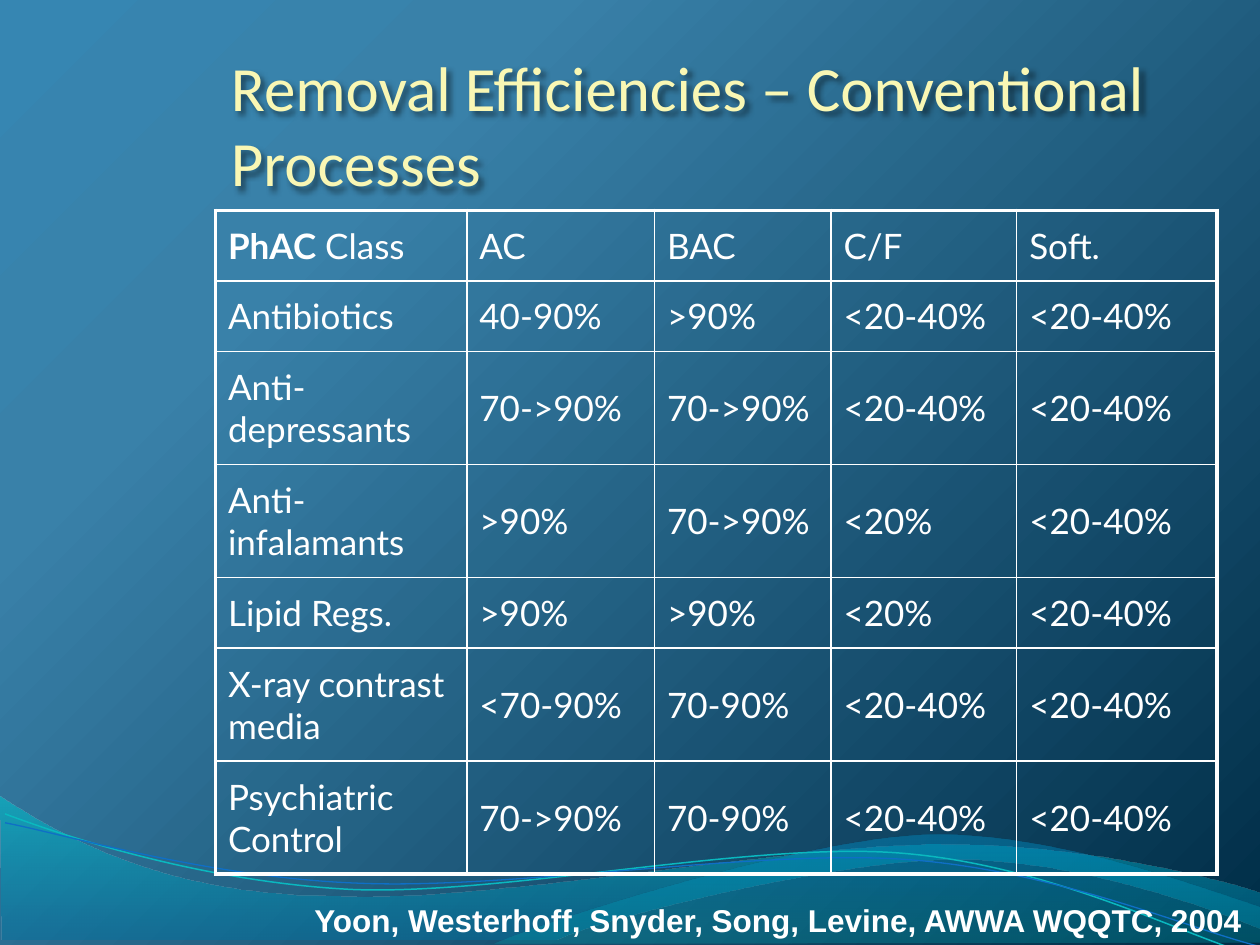
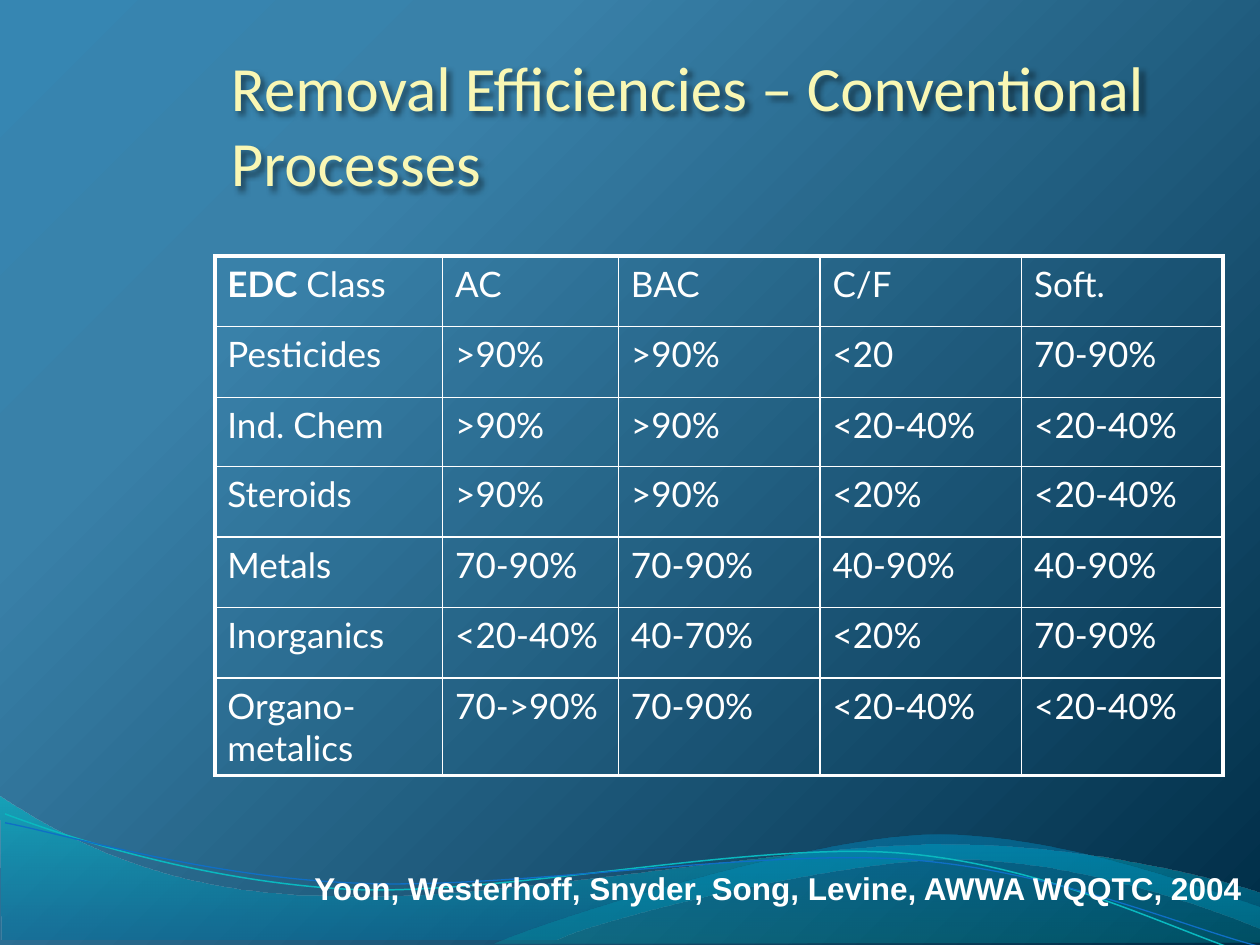
from lxml import etree
from pptx import Presentation
from pptx.dml.color import RGBColor
from pptx.enum.text import MSO_ANCHOR, MSO_AUTO_SIZE, PP_ALIGN
from pptx.oxml import parse_xml
from pptx.oxml.ns import nsdecls, qn
from pptx.util import Inches, Pt

LEFT, CENTER = PP_ALIGN.LEFT, PP_ALIGN.CENTER
TOP, MIDDLE, BOTTOM = MSO_ANCHOR.TOP, MSO_ANCHOR.MIDDLE, MSO_ANCHOR.BOTTOM
NO_FIT = MSO_AUTO_SIZE.NONE

WHITE = RGBColor(0xFF, 0xFF, 0xFF)
CREAM = RGBColor(0xF9, 0xF7, 0xB4)
SKY = RGBColor(0x36, 0x86, 0xB2)
STEEL = RGBColor(0x39, 0x81, 0xA9)
NAVY = RGBColor(0x00, 0x2D, 0x47)
OCEAN = RGBColor(0x00, 0x74, 0xA1)
AQUA = RGBColor(0x00, 0xC6, 0xCF)
TEAL = RGBColor(0x00, 0xA1, 0xA9)
AZURE = RGBColor(0x00, 0x8B, 0xBF)
CYAN = RGBColor(0x0A, 0xB8, 0xBF)
BLUE = RGBColor(0x0F, 0x6F, 0xC6)

WIDE, HIGH = Inches(10), Inches(7.5)
UNIT = WIDE // 100
THICK, THIN = Pt(2.25), Pt(1)

TITLE = "Removal Efficiencies – Conventional Processes"
CREDIT = "Yoon, Westerhoff, Snyder, Song, Levine, AWWA WQQTC, 2004"
HEADS = ["AC", "BAC", "C/F", "Soft."]

PAGES = [
    dict(left=17.1, top=16.7, anchor=MIDDLE, foot=71, lead="PhAC",
         cols=[19.95, 14.9, 14, 14.75, 15.9],
         rows=[5.6, 5.6, 8.97, 8.97, 5.6, 8.97, 8.97],
         data=[
             ["Antibiotics", "40-90%", ">90%", "<20-40%", "<20-40%"],
             ["Anti-depressants", "70->90%", "70->90%", "<20-40%", "<20-40%"],
             ["Anti-infalamants", ">90%", "70->90%", "<20%", "<20-40%"],
             ["Lipid Regs.", ">90%", ">90%", "<20%", "<20-40%"],
             ["X-ray contrast media", "<70-90%", "70-90%", "<20-40%", "<20-40%"],
             ["Psychiatric Control", "70->90%", "70-90%", "<20-40%", "<20-40%"],
         ]),
    dict(left=17.05, top=20.33, anchor=TOP, foot=68.5, lead="EDC",
         cols=[18.08, 13.95, 16, 16, 16],
         rows=[5.6, 5.6, 5.5, 5.6, 5.6, 5.6, 5.6],
         data=[
             ["Pesticides", ">90%", ">90%", "<20", "70-90%"],
             ["Ind. Chem", ">90%", ">90%", "<20-40%", "<20-40%"],
             ["Steroids", ">90%", ">90%", "<20%", "<20-40%"],
             ["Metals", "70-90%", "70-90%", "40-90%", "40-90%"],
             ["Inorganics", "<20-40%", "40-70%", "<20%", "70-90%"],
             ["Organo-metalics", "70->90%", "70-90%", "<20-40%", "<20-40%"],
         ]),
]

WAVES = [
    dict(start=(0.1, 74.6), stops=[(0, OCEAN, 45), (100, AQUA, 55)], segs=[
        (44.1, 74.6),
        (47.6, 72.9, 66.4, 68.2, 75.9, 68.2),
        (85.3, 68.2, 95.8, 72, 100, 73.7),
        (100.1, 70.9),
        (98.3, 70.2, 87, 67, 74.6, 67),
        (62.2, 67, 38.2, 71.8, 25.8, 71.1),
        (13, 71, 4.7, 66.3, 0, 63.2),
        (0.1, 74.6)]),
    dict(start=(39.2, 74.9), stops=[(0, TEAL, 30), (80, AZURE, 45)], segs=[
        (42.7, 73.3, 62.9, 66.8, 73, 66.3),
        (83.1, 65.8, 95.5, 70.6, 100, 72),
        (100, 74.8),
        (39.2, 74.9)]),
    dict(start=(0.4, 64.6), line=CYAN, weight=0.85, segs=[
        (5.2, 66.4, 16.1, 70, 27.9, 70.6),
        (39.8, 71.1, 59.4, 66.8, 71.3, 67.7),
        (83.3, 68.6, 93.8, 74.2, 99.7, 75.9)]),
    dict(start=(0.4, 65.3), line=BLUE, weight=0.75, segs=[
        (5.1, 66.2, 16.7, 69.7, 28.6, 70.1),
        (40.5, 70.6, 59.9, 67.4, 71.7, 68.2),
        (83.6, 69, 94, 73.6, 99.9, 75.1)]),
]


def write(frame, *parts, size, font, color, bold=False, align=LEFT, before=0):
    para = frame.paragraphs[0]
    para.alignment = align
    if before:
        gap = etree.SubElement(para._p.get_or_add_pPr(), qn("a:spcBef"))
        etree.SubElement(gap, qn("a:spcPct")).set("val", str(before * 1000))
    for spot, part in enumerate(parts):
        run = para.add_run()
        run.text = part
        run.font.size = Pt(size)
        run.font.name = font
        run.font.color.rgb = color
        run.font.bold = bold and spot == 0


def blend(stops, way):
    marks = "".join(
        f'<a:gs pos="{at * 1000}"><a:srgbClr val="{color}">'
        f'<a:alpha val="{alpha * 1000}"/></a:srgbClr></a:gs>'
        for at, color, alpha in stops)
    return parse_xml(f'<a:gradFill {nsdecls("a")} rotWithShape="1">'
                     f'<a:gsLst>{marks}</a:gsLst>{way}</a:gradFill>')


deck = Presentation()
deck.slide_width, deck.slide_height = WIDE, HIGH
master = deck.slide_master
layout = deck.slide_layouts[5]

master.background.fill.solid()
solid = master.element.find(".//" + qn("p:bgPr")).find(qn("a:solidFill"))
solid.getparent().replace(solid, blend(
    [(0, SKY, 100), (25, STEEL, 100), (100, NAVY, 100)],
    '<a:path path="circle"><a:fillToRect l="0" t="0" r="100000" b="100000"/></a:path>'))

head = layout.placeholders[0]
head.left, head.top = round(18.33 * UNIT), round(3.33 * UNIT)
head.width, head.height = round(77.5 * UNIT), round(12.5 * UNIT)
frame = head.text_frame
frame.vertical_anchor = BOTTOM
frame.auto_size = NO_FIT
frame.margin_left = frame.margin_right = frame.margin_bottom = 0
frame.margin_top = Inches(0.05)

slides = [deck.slides.add_slide(layout) for page in PAGES]

for rank, wave in enumerate(WAVES):
    x, y = wave["start"]
    pen = slides[0].shapes.build_freeform(round(x * UNIT), round(y * UNIT))
    for seg in wave["segs"]:
        pen.add_line_segments([(round(x * UNIT), round(y * UNIT))
                               for x, y in zip(seg[::2], seg[1::2])], close=False)
    shape = pen.convert_to_shape()
    lines = iter(shape.element.findall(".//" + qn("a:lnTo")))
    for seg in wave["segs"]:
        line = next(lines)
        if len(seg) == 6:
            curve = etree.Element(qn("a:cubicBezTo"))
            line.addprevious(curve)
            for knot in (line, next(lines), next(lines)):
                curve.append(knot[0])
                knot.getparent().remove(knot)
    shape.shadow.inherit = False
    if "stops" in wave:
        etree.SubElement(curve.getparent(), qn("a:close"))
        shape.line.fill.background()
        shape.fill.solid()
        props = shape.element.spPr
        props.replace(props.find(qn("a:solidFill")),
                      blend(wave["stops"], '<a:lin ang="16200000" scaled="0"/>'))
    else:
        shape.fill.background()
        shape.line.color.rgb = wave["line"]
        shape.line.width = Pt(wave["weight"])
    shape.element.find(".//" + qn("p:cNvPr")).set("id", str(100 + rank))
    master.shapes.element.insert(2 + rank, shape.element)

for slide, page in zip(slides, PAGES):
    title = slide.shapes.title
    write(title.text_frame, TITLE, size=36, font="Calibri", color=CREAM)
    title.fill.background()
    title.element.spPr.append(parse_xml(
        f'<a:effectLst {nsdecls("a")}><a:outerShdw blurRad="38100" dist="38100" '
        'dir="2700000" algn="tl"><a:srgbClr val="000000"><a:alpha val="45000"/>'
        '</a:srgbClr></a:outerShdw></a:effectLst>'))

    cols, rows = page["cols"], page["rows"]
    grid = slide.shapes.add_table(
        len(rows), len(cols), round(page["left"] * UNIT), round(page["top"] * UNIT),
        round(sum(cols) * UNIT), round(sum(rows) * UNIT)).table
    grid.first_row = grid.horz_banding = False
    for col, width in zip(grid.columns, cols):
        col.width = round(width * UNIT)
    for row, height in zip(grid.rows, rows):
        row.height = round(height * UNIT)

    for r, words in enumerate([[page["lead"]] + HEADS] + page["data"]):
        for c, word in enumerate(words):
            cell = grid.cell(r, c)
            first = r == c == 0
            parts = [word, " Class"] if first else [word]
            write(cell.text_frame, *parts, size=20, font="Lato", color=WHITE,
                  bold=first, before=20)
            cell.vertical_anchor = page["anchor"]
            cell.fill.background()
            edges = dict(lnL=c == 0, lnR=c == len(cols) - 1,
                         lnT=r == 0, lnB=r == len(rows) - 1)
            for spot, (tag, outer) in enumerate(edges.items()):
                cell._tc.get_or_add_tcPr().insert(spot, parse_xml(
                    f'<a:{tag} {nsdecls("a")} w="{THICK if outer else THIN}">'
                    f'<a:solidFill><a:srgbClr val="{WHITE}"/></a:solidFill></a:{tag}>'))

    note = slide.shapes.add_textbox(round(23.5 * UNIT), round(page["foot"] * UNIT),
                                    round(76.5 * UNIT), 4 * UNIT)
    note.text_frame.word_wrap = False
    write(note.text_frame, CREDIT, size=18, font="Arial", color=WHITE,
          bold=True, align=CENTER, before=50)

deck.save("out.pptx")
